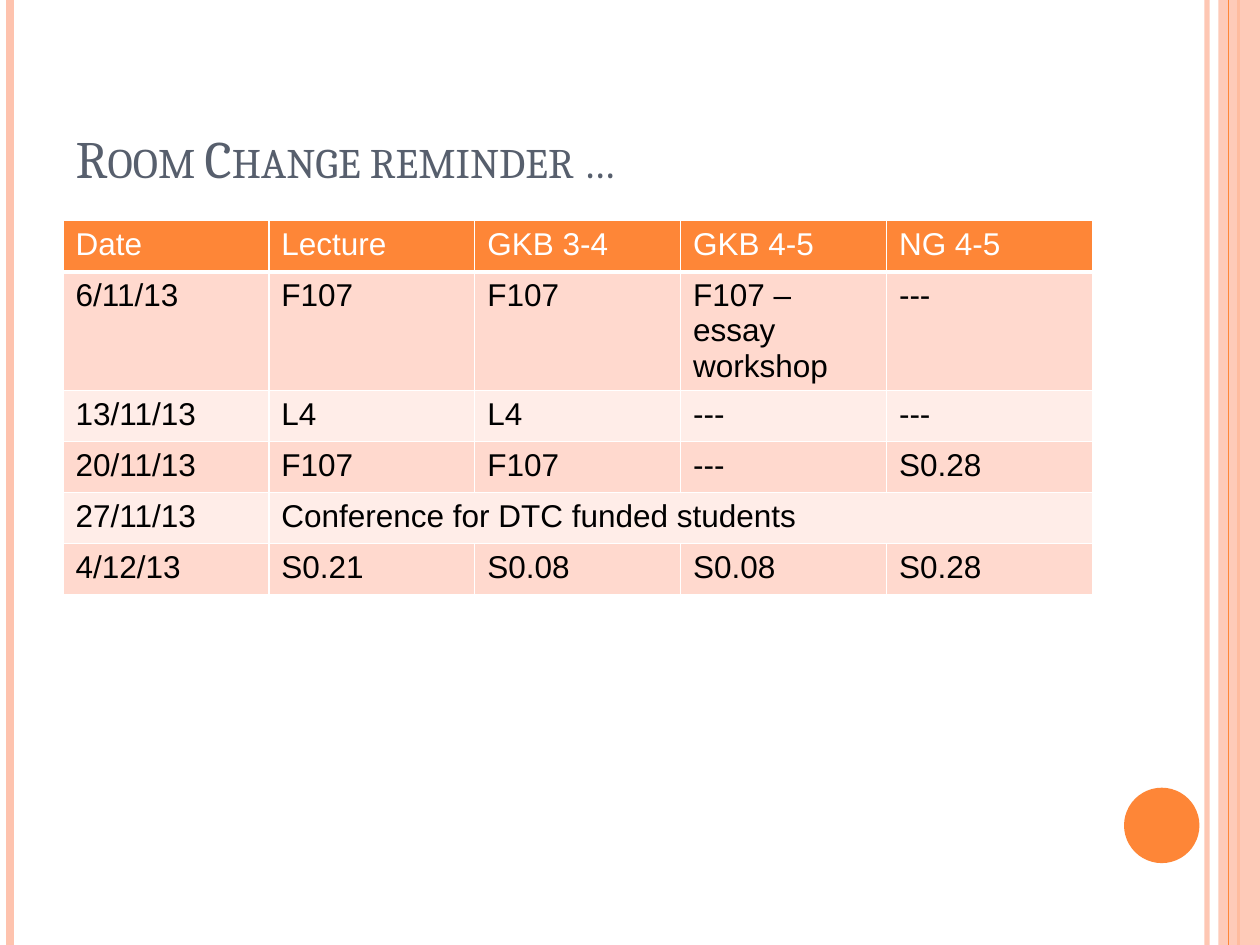
"""Build the room change reminder slide."""
import pptx
import pptx.util
import pptx.dml.color
import pptx.enum.shapes
import pptx.enum.text
import pptx.oxml
import pptx.oxml.ns
import lxml.etree

Cm, Pt = pptx.util.Cm, pptx.util.Pt
SHAPE = pptx.enum.shapes.MSO_SHAPE

COLOURS = {
    "orange": "FE8637", "peach": "FEC3AE", "slate": "575F6D",
    "dark band": "FFD9CE", "light band": "FFEDE8",
    "white": "FFFFFF", "black": "000000",
}
TITLE = "Room Change reminder …"
ROWS = [
    ["Date", "Lecture", "GKB 3-4", "GKB 4-5", "NG 4-5"],
    ["6/11/13", "F107", "F107", "F107 – essay workshop", "---"],
    ["13/11/13", "L4", "L4", "---", "---"],
    ["20/11/13", "F107", "F107", "---", "S0.28"],
    ["27/11/13", "Conference for DTC funded students"],
    ["4/12/13", "S0.21", "S0.08", "S0.08", "S0.28"],
]
DECORATIONS = [
    ("line", 24.33, 3, "peach", 93),
    ("line", 0.2, 4.5, "peach", 100),
    ("line", 24.97, 1.5, "orange", 100),
    (SHAPE.RECTANGLE, (24.56, 0, 0.84, 19.05), "peach", 87),
    ("line", 24.77, 0.75, "orange", 100),
    (SHAPE.OVAL, (22.66, 15.88, 1.52, 1.52), "orange", 100),
]
TITLE_PLACE = (1.27, 0.76, 20.75, 3.18)
TABLE_LEFT, TABLE_TOP = 1.27, 4.45
COLUMN_WIDTH, ROW_HEIGHT = 4.15, 1.03
TITLE_FONT = {"name": "Cambria", "size": Pt(30), "bold": False}
CELL_FONT = {"name": "Arial", "size": Pt(18), "bold": False}


def rgb(name):
    return pptx.dml.color.RGBColor.from_string(COLOURS[name])


def style_font(font, values, colour):
    for key, value in values.items():
        setattr(font, key, value)
    font.color.rgb = rgb(colour)


def paint(fill, colour, opacity=100):
    fill.solid()
    fill.fore_color.rgb = rgb(colour)
    if opacity < 100:
        tint = fill._xPr.find(".//" + pptx.oxml.ns.qn("a:srgbClr"))
        alpha = lxml.etree.SubElement(tint, pptx.oxml.ns.qn("a:alpha"))
        alpha.set("val", str(opacity * 1000))


def add_stripe(page, height, left, width, colour, opacity):
    stripe = page.shapes.add_connector(
        pptx.enum.shapes.MSO_CONNECTOR.STRAIGHT, Cm(left), 0, Cm(left), height)
    stripe.line.width = Pt(width)
    paint(stripe.line.fill, colour, opacity)
    lxml.etree.SubElement(stripe._element.spPr, pptx.oxml.ns.qn("a:effectLst"))


def add_block(page, kind, place, colour, opacity):
    block = page.shapes.add_shape(kind, *map(Cm, place))
    block.shadow.inherit = False
    block.line.fill.background()
    paint(block.fill, colour, opacity)


def add_borders(cell, bottom):
    properties = cell._tc.get_or_add_tcPr()
    for side, width in (("L", 1), ("R", 1), ("T", 1), ("B", bottom)):
        properties.append(pptx.oxml.parse_xml(
            f'<a:ln{side} {pptx.oxml.ns.nsdecls("a")} w="{Pt(width)}"><a:solidFill>'
            f'<a:srgbClr val="{COLOURS["white"]}"/></a:solidFill></a:ln{side}>'))


def place_title(page):
    title = page.shapes.title
    title.left, title.top, title.width, title.height = map(Cm, TITLE_PLACE)
    frame = title.text_frame
    frame.word_wrap = True
    frame.vertical_anchor = pptx.enum.text.MSO_ANCHOR.BOTTOM
    para = frame.paragraphs[0]
    para.alignment = pptx.enum.text.PP_ALIGN.LEFT
    span = para.add_run()
    span.text = TITLE
    style_font(span.font, TITLE_FONT, "slate")
    span._r.get_or_add_rPr().set("cap", "small")
    title._element.getparent().append(title._element)


def add_schedule(page):
    columns = len(ROWS[0])
    table = page.shapes.add_table(
        len(ROWS), columns, Cm(TABLE_LEFT), Cm(TABLE_TOP),
        Cm(COLUMN_WIDTH * columns), Cm(ROW_HEIGHT * len(ROWS))).table
    for column in table.columns:
        column.width = Cm(COLUMN_WIDTH)
    for index, texts in enumerate(ROWS):
        header = index == 0
        band = "orange" if header else ("light band", "dark band")[index % 2]
        table.rows[index].height = Cm(ROW_HEIGHT)
        for number in range(columns):
            cell = table.cell(index, number)
            add_borders(cell, 3 if header else 1)
            paint(cell.fill, band)
            if number < len(texts):
                span = cell.text_frame.paragraphs[0].add_run()
                span.text = texts[number]
                style_font(span.font, CELL_FONT, "white" if header else "black")
        if len(texts) < columns:
            table.cell(index, len(texts) - 1).merge(table.cell(index, columns - 1))


def main():
    deck = pptx.Presentation()
    deck.slide_width, deck.slide_height = Cm(25.4), Cm(19.05)
    page = deck.slides.add_slide(deck.slide_layouts[5])
    for kind, *details in DECORATIONS:
        if kind == "line":
            add_stripe(page, deck.slide_height, *details)
        else:
            add_block(page, kind, *details)
    place_title(page)
    add_schedule(page)
    deck.save("out.pptx")


if __name__ == "__main__":
    main()
